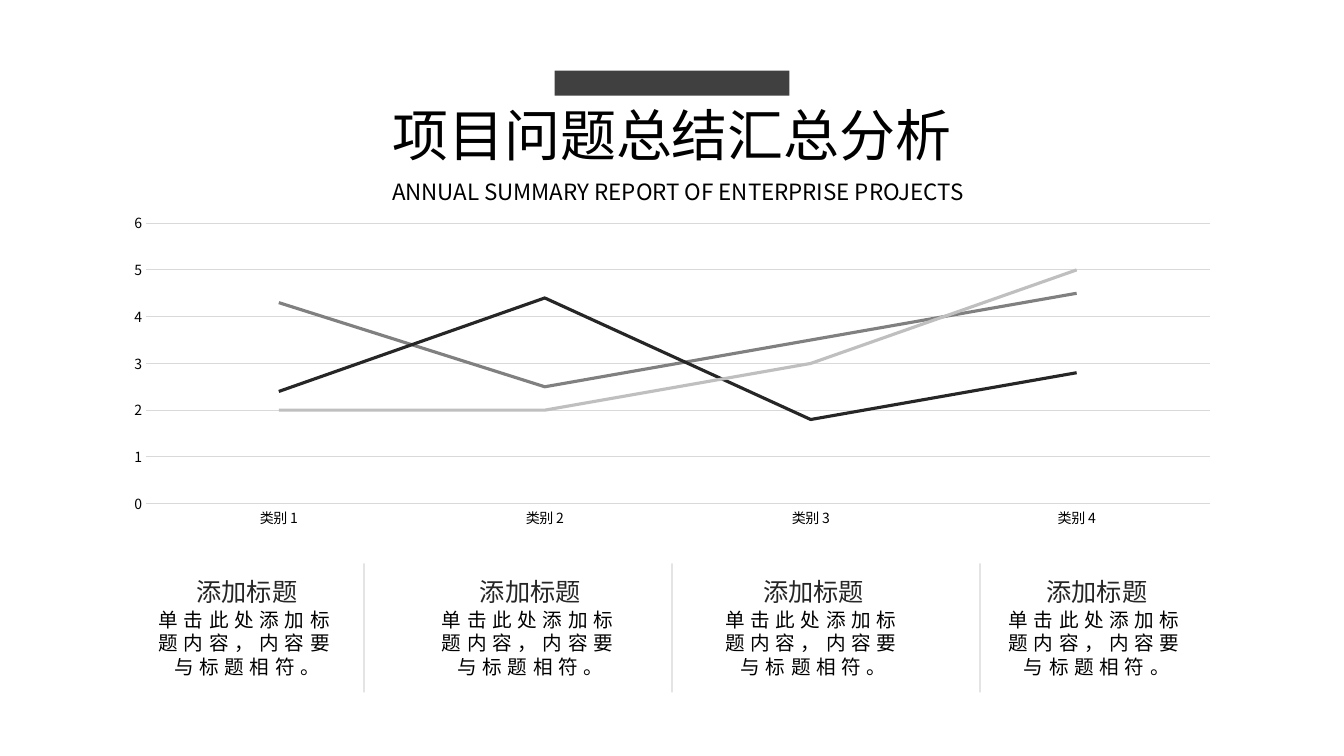
import lxml.etree
import pptx
import pptx.chart.data
import pptx.dml.color
import pptx.enum.chart
import pptx.enum.shapes
import pptx.enum.text
import pptx.oxml
import pptx.oxml.ns
import pptx.util

Inches = pptx.util.Inches
FONT = "Noto Sans CJK SC"
COLORS = {
    "text": "000000",
    "heading": "262626",
    "bar": "404040",
    "grid": "D9D9D9",
    "divider": "A6A6A6",
}
SERIES = [
    ("Series 1", (4.3, 2.5, 3.5, 4.5), "808080"),
    ("Series 2", (2.4, 4.4, 1.8, 2.8), "262626"),
    ("Series 3", (2, 2, 3, 5), "BFBFBF"),
]


def color(name):
    """Return the palette colour of the given name."""
    return pptx.dml.color.RGBColor.from_string(COLORS[name])


def set_font(font, size, name="text"):
    """Give a font its typeface, size and colour."""
    font.name = FONT
    font.size = pptx.util.Pt(size)
    font.color.rgb = color(name)


def write_text(shape, text, size, name="text", spacing=0):
    """Fill a shape with one centred paragraph."""
    frame = shape.text_frame
    frame.word_wrap = True
    frame.auto_size = pptx.enum.text.MSO_AUTO_SIZE.NONE
    frame.vertical_anchor = pptx.enum.text.MSO_ANCHOR.TOP
    frame.text = text
    paragraph = frame.paragraphs[0]
    paragraph.alignment = pptx.enum.text.PP_ALIGN.CENTER
    set_font(paragraph.font, size, name)
    properties = paragraph.font._element if hasattr(paragraph.font, "_element") else paragraph.font._rPr
    latin = properties.find(pptx.oxml.ns.qn("a:latin"))
    east_asian = lxml.etree.Element(pptx.oxml.ns.qn("a:ea"), typeface=FONT)
    latin.addnext(east_asian)
    if spacing:
        properties.set("spc", str(spacing * 100))


def add_text(slide, left, top, width, height, *text_format):
    """Add a text box with one centred paragraph."""
    box = slide.shapes.add_textbox(Inches(left), Inches(top), Inches(width), Inches(height))
    write_text(box, *text_format)


def add_header(slide, left, top, width):
    """Place the bar, title and subtitle in the header region."""
    bar_width = 2.33
    bar = slide.shapes.add_shape(
        pptx.enum.shapes.MSO_SHAPE.RECTANGLE,
        Inches(left + (width - bar_width) / 2), Inches(top), Inches(bar_width), Inches(0.25),
    )
    bar.shadow.inherit = False
    bar.fill.solid()
    bar.fill.fore_color.rgb = color("bar")
    bar.line.fill.background()
    title = slide.shapes.title
    title.left, title.top = Inches(left), Inches(top + 0.25)
    title.width, title.height = Inches(width), Inches(0.77)
    write_text(title, "项目问题总结汇总分析", 40)
    add_text(slide, left + 0.11, top + 1.02, width - 0.1, 0.37,
             "ANNUAL SUMMARY REPORT OF ENTERPRISE PROJECTS", 16)


def add_line_chart(slide, left, top, width, height):
    """Place the line chart with its axes and series."""
    data = pptx.chart.data.CategoryChartData()
    data.categories = [f"类别 {number}" for number in range(1, 5)]
    for name, values, _ in SERIES:
        data.add_series(name, values)
    chart = slide.shapes.add_chart(
        pptx.enum.chart.XL_CHART_TYPE.LINE,
        Inches(left), Inches(top), Inches(width), Inches(height), data,
    ).chart
    chart.has_legend = False
    chart.has_title = False
    set_font(chart.font, 10)
    chart.plots[0].vary_by_categories = False
    for axis in (chart.category_axis, chart.value_axis):
        axis.major_tick_mark = pptx.enum.chart.XL_TICK_MARK.NONE
        axis.minor_tick_mark = pptx.enum.chart.XL_TICK_MARK.NONE
        set_font(axis.tick_labels.font, 10)
    value_axis = chart.value_axis
    value_axis.minimum_scale, value_axis.maximum_scale, value_axis.major_unit = 0, 6, 1
    value_axis.format.line.fill.background()
    for line in (chart.category_axis.format.line, value_axis.major_gridlines.format.line):
        line.color.rgb = color("grid")
        line.width = pptx.util.Pt(0.75)
    for series, (_, _, line_color) in zip(chart.plots[0].series, SERIES):
        series.smooth = False
        series.marker.style = pptx.enum.chart.XL_MARKER_STYLE.NONE
        series.format.line.color.rgb = pptx.dml.color.RGBColor.from_string(line_color)
        series.format.line.width = pptx.util.Pt(2.25)


def add_divider(slide, left, top, height):
    """Place one translucent vertical divider."""
    divider = slide.shapes.add_connector(
        pptx.enum.shapes.MSO_CONNECTOR.STRAIGHT,
        Inches(left), Inches(top), Inches(left), Inches(top + height),
    )
    divider.line.color.rgb = color("divider")
    divider.line.width = pptx.util.Pt(0.5)
    properties = divider._element.spPr
    fill_color = properties.find(".//" + pptx.oxml.ns.qn("a:srgbClr"))
    lxml.etree.SubElement(fill_color, pptx.oxml.ns.qn("a:alpha"), val="82000")
    lxml.etree.SubElement(properties, pptx.oxml.ns.qn("a:effectLst"))


def add_notes_row(slide, left, top, height):
    """Place four captioned notes and the dividers between them."""
    for index in range(3):
        add_divider(slide, left + 2.18 + index * 3.055, top, height)
    for index in range(4):
        note_left = left + index * 2.81
        add_text(slide, note_left, top + 0.39, 2.04, 0.81,
                 "单击此处添加标题内容，内容要与标题相符。", 14, "text", 4)
        add_text(slide, note_left + 0.19, top + 0.08, 1.66, 0.4, "添加标题", 18, "heading")


def main():
    """Build the summary slide and save it."""
    presentation = pptx.Presentation()
    presentation.slide_width = Inches(13.33)
    presentation.slide_height = Inches(7.5)
    slide = presentation.slides.add_slide(presentation.slide_layouts[5])
    add_header(slide, 3.47, 0.7, 6.39)
    add_line_chart(slide, 1.11, 2.05, 11.11, 3.25)
    add_notes_row(slide, 1.43, 5.59, 1.28)
    presentation.save("out.pptx")


if __name__ == "__main__":
    main()
